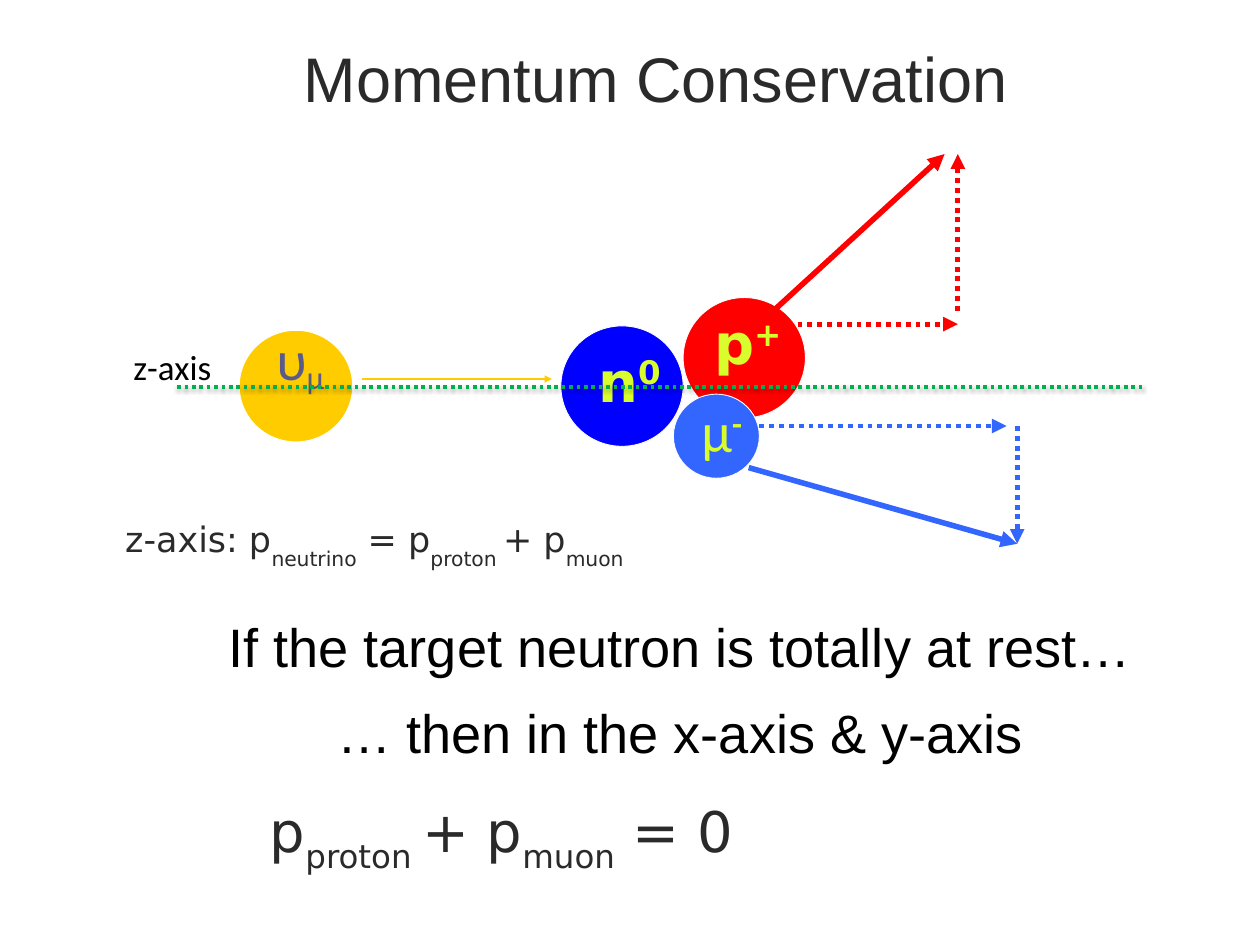
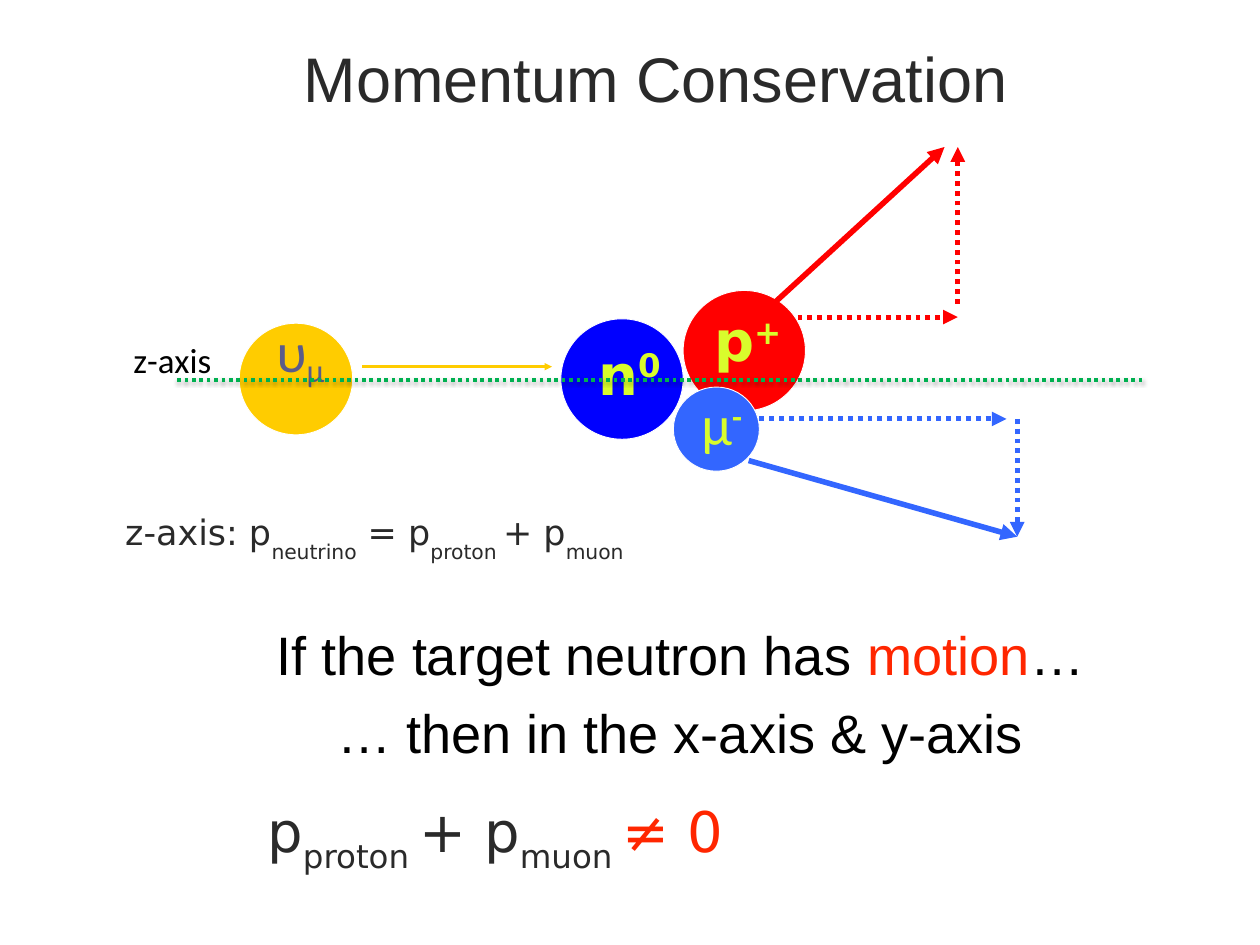
from lxml import etree
from pptx import Presentation
from pptx import util as u
from pptx.dml.color import RGBColor
from pptx.enum import dml, shapes, text
from pptx.oxml.ns import qn

INK = RGBColor(0x2A, 0x2A, 0x2A)
BLACK = RGBColor(0x00, 0x00, 0x00)
WHITE = RGBColor(0xFF, 0xFF, 0xFF)
GOLD = RGBColor(0xFF, 0xCC, 0x00)
NAVY = RGBColor(0x00, 0x00, 0xFF)
RED = RGBColor(0xFF, 0x00, 0x00)
BLUE = RGBColor(0x33, 0x66, 0xFF)
GREEN = RGBColor(0x00, 0xB0, 0x50)
LIME = RGBColor(0xD9, 0xFC, 0x2C)
SLATE = RGBColor(0x5B, 0x5B, 0x89)
ACCENT = RGBColor(0xFF, 0x26, 0x00)

SANS, BODY, MATH = "Arial", "Calibri", "DejaVu Sans"


def add_run(p, content, size, font, color, bold=False, base=0):
    r = p.add_run()
    r.text = content
    r.font.size = u.Pt(size)
    r.font.name = font
    r.font.color.rgb = color
    r.font.bold = bold
    if base:
        r._r.get_or_add_rPr().set("baseline", str(base * 1000))


class Deck:
    def __init__(self, width, height):
        self.prs = Presentation()
        self.prs.slide_width = u.Inches(width)
        self.prs.slide_height = u.Inches(height)
        self.slide = None
        self.dy = 0

    def new_slide(self, title):
        self.slide = self.prs.slides.add_slide(self.prs.slide_layouts[5])
        self.dy = 0
        sp = self.slide.shapes.title
        sp.left, sp.top, sp.width, sp.height = map(u.Inches, (3.32, 0.4, 8.17, 0.96))
        self.fill_text(sp, [(title, {})], wrap=False, grow=True, padded=True,
                       size=51.2, font=SANS, color=INK)

    def fill_text(self, sp, runs, wrap=True, grow=False, padded=False, **style):
        tf = sp.text_frame
        tf.word_wrap = wrap
        tf.auto_size = (text.MSO_AUTO_SIZE.SHAPE_TO_FIT_TEXT if grow
                        else text.MSO_AUTO_SIZE.NONE)
        tf.vertical_anchor = text.MSO_ANCHOR.TOP
        tf.margin_left = tf.margin_right = u.Inches(0.07 if padded else 0)
        tf.margin_top = tf.margin_bottom = u.Inches(0.05 if padded else 0)
        p = tf.paragraphs[0]
        p.alignment = text.PP_ALIGN.CENTER
        for content, change in runs:
            add_run(p, content, **{**style, **change})

    def text(self, x, y, w, h, runs, **style):
        box = map(u.Inches, (x, y + self.dy, w, h))
        self.fill_text(self.slide.shapes.add_textbox(*box), runs, **style)

    def statement(self, y, runs, **style):
        self.text(0.57, y, 14.22, 0.8, runs, grow=True,
                  size=44, font=SANS, color=BLACK, **style)

    def formula(self, x, y, w, h, size, runs):
        self.text(x, y, w, h, runs, wrap=False, grow=True, padded=True,
                  size=size, font=MATH, color=INK)

    def ball(self, x, y, w, h, color):
        box = map(u.Inches, (x, y + self.dy, w, h))
        sp = self.slide.shapes.add_shape(shapes.MSO_SHAPE.OVAL, *box)
        sp.shadow.inherit = False
        sp.fill.solid()
        sp.fill.fore_color.rgb = color
        sp.line.color.rgb = WHITE
        sp.line.width = u.Pt(0.75)

    def line(self, x1, y1, x2, y2, color, width, dotted=False, arrow=True, shadow=False):
        ends = map(u.Inches, (x1, y1 + self.dy, x2, y2 + self.dy))
        sp = self.slide.shapes.add_connector(shapes.MSO_CONNECTOR.STRAIGHT, *ends)
        sp.line.color.rgb = color
        sp.line.width = u.Pt(width)
        if dotted:
            sp.line.dash_style = dml.MSO_LINE.ROUND_DOT
        if arrow:
            etree.SubElement(sp.line._get_or_add_ln(), qn("a:tailEnd"), type="triangle")
        effects = etree.SubElement(sp._element.spPr, qn("a:effectLst"))
        if shadow:
            cast = etree.SubElement(effects, qn("a:outerShdw"), blurRad=str(u.Pt(3)),
                                    dist=str(u.Pt(1.6)), dir="5400000", rotWithShape="0")
            tint = etree.SubElement(cast, qn("a:srgbClr"), val=str(BLACK))
            etree.SubElement(tint, qn("a:alpha"), val="38000")

    def collision(self, dy, neutrino_arrow_y, proton_label_y):
        self.dy = dy
        symbol = dict(size=45.5, color=LIME)

        self.ball(2.7, 3.73, 1.28, 1.26, GOLD)
        self.text(2.96, 3.66, 0.86, 0.77, [("υ", {}), ("μ", {"base": -17})],
                  size=45.5, font=BODY, color=SLATE)
        self.ball(6.33, 3.68, 1.38, 1.36, NAVY)
        self.text(6.68, 3.91, 0.85, 0.84, [("n", {}), ("0", {"base": 31})],
                  font=MATH, bold=True, **symbol)
        self.line(4.09, neutrino_arrow_y, 6.23, neutrino_arrow_y, GOLD, 2)

        self.ball(7.71, 3.36, 1.38, 1.36, RED)
        self.text(7.99, proton_label_y, 0.9, 0.84, [("p", {}), ("+", {"base": 31})],
                  font=MATH, bold=True, **symbol)
        self.line(8.75, 3.49, 10.66, 1.74, RED, 4.5)
        self.line(8.89, 3.66, 10.81, 3.66, RED, 4, dotted=True)
        self.line(10.81, 3.51, 10.81, 1.74, RED, 4, dotted=True)

        self.ball(7.6, 4.45, 0.97, 0.95, BLUE)
        self.text(7.9, 4.48, 0.49, 0.65, [("μ", {}), ("-", {"base": 31, "bold": True})],
                  font=BODY, **symbol)
        self.line(8.45, 5.28, 11.48, 6.14, BLUE, 4.5)
        self.line(8.57, 4.81, 11.36, 4.81, BLUE, 4, dotted=True)
        self.line(11.48, 4.81, 11.48, 6.14, BLUE, 4, dotted=True)

        self.line(2, 4.37, 12.93, 4.37, GREEN, 3, dotted=True, arrow=False, shadow=True)
        self.text(1.29, 3.9, 1.31, 0.56, [("z-axis", {})],
                  size=28.4, font=BODY, color=BLACK)
        self.formula(1.07, 5.8, 6.31, 0.7, 28.4, [
            ("z-axis: p", {}), ("neutrino", {"base": -40}), (" = p", {}),
            ("proton ", {"base": -40}), ("+ p", {}), ("muon", {"base": -40})])
        self.dy = 0

    def conclusion(self, premise_y, premise, sum_x, result):
        self.statement(premise_y, premise, padded=True)
        self.statement(7.9, [("… then in the x-axis & y-axis", {})])
        self.formula(sum_x, 8.95, 5.82, 0.8, 45.5, [
            ("p", {}), ("proton ", {"base": -27}), ("+ p", {}),
            ("muon", {"base": -27}), *result])


def main():
    deck = Deck(14.22, 10.67)
    title = "Momentum Conservation"

    deck.new_slide(title)
    deck.collision(dy=0, neutrino_arrow_y=4.28, proton_label_y=3.48)
    deck.conclusion(6.88, [("If the target neutron is totally at rest…", {})],
                    2.75, [(" = 0", {})])

    deck.new_slide(title)
    deck.collision(dy=-0.08, neutrino_arrow_y=4.22, proton_label_y=3.53)
    deck.conclusion(6.97, [("If the target neutron has ", {}),
                           ("motion", {"color": ACCENT}), ("…", {})],
                    2.68, [(" ", {"base": -27}), ("≠ 0", {"color": ACCENT})])

    deck.prs.save("out.pptx")


if __name__ == "__main__":
    main()
